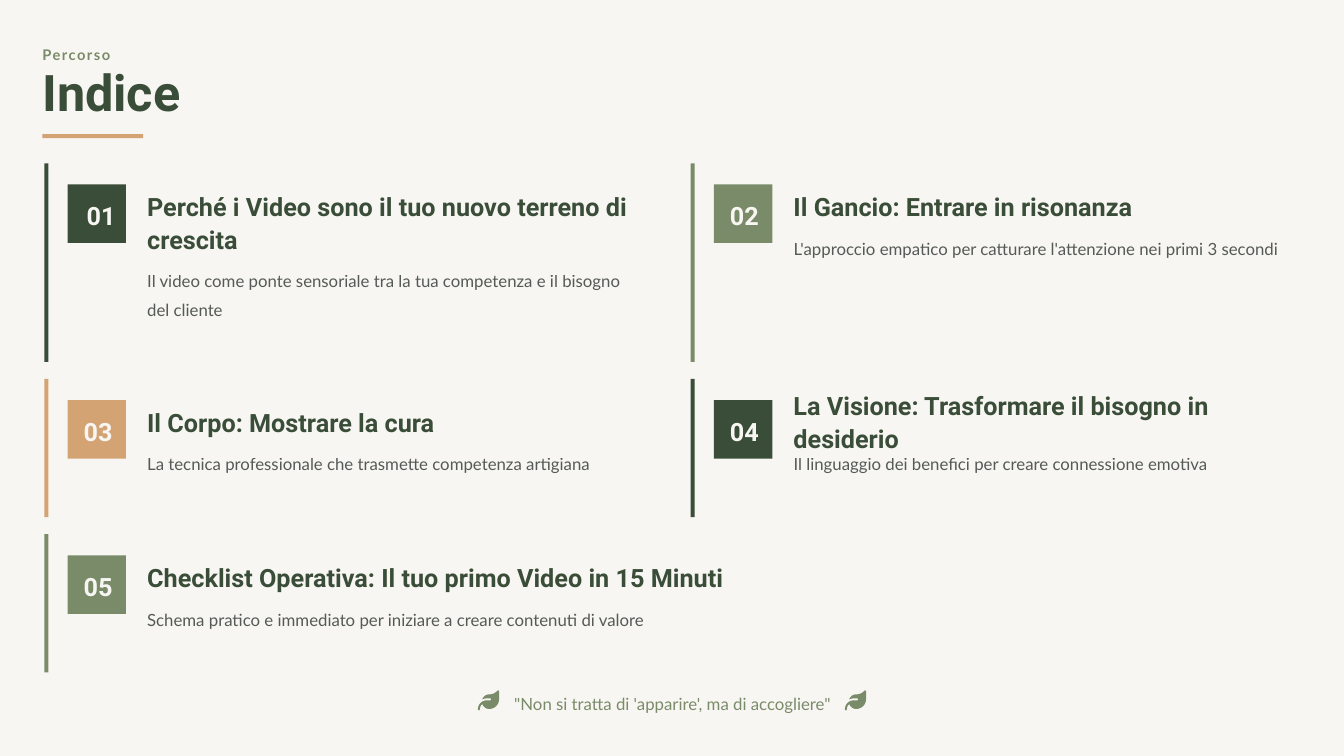
from dataclasses import dataclass
from pptx import Presentation
from pptx.dml.color import RGBColor
from pptx.enum.shapes import MSO_SHAPE
from pptx.enum.text import MSO_ANCHOR, MSO_AUTO_SIZE, PP_ALIGN
from pptx.oxml.ns import qn
from pptx.util import Inches, Pt
from lxml.etree import SubElement

FOREST, SAGE, SAND, CREAM, INK = "3A4D39", "7A8B69", "D4A373", "F8F6F2", "2C332E"
COLUMN_LEFTS = (0.44, 6.85)
ROW_HEIGHTS = (1.97, 1.37, 1.37)
FIRST_ROW_TOP, ROW_GAP = 1.62, 0.17
HALF_WIDTH, FULL_WIDTH = 6.04, 12.46

LEAF_START = (471, 7)
LEAF_CURVES = [
    ((478, 1), (487, -2), (496, 1)), ((505, 5), (512, 14), (512, 24)),
    ((512, 24), (512, 211), (512, 211)), ((512, 342), (404, 448), (273, 448)),
    ((196, 448), (130, 399), (106, 329)), ((70, 360), (48, 405), (48, 456)),
    ((48, 469), (37, 480), (24, 480)), ((11, 480), (0, 469), (0, 456)),
    ((0, 381), (38, 315), (96, 276)), ((131, 253), (174, 240), (216, 240)),
    ((216, 240), (296, 240), (296, 240)), ((309, 240), (320, 229), (320, 216)),
    ((320, 203), (309, 192), (296, 192)), ((296, 192), (216, 192), (216, 192)),
    ((176, 192), (139, 201), (105, 217)), ((128, 146), (194, 96), (272, 96)),
    ((338, 96), (388, 74), (421, 52)), ((440, 39), (456, 24), (471, 7)),
]


@dataclass
class Chapter:
    """One entry of the index."""
    row: int
    column: int
    color: str
    heading: str
    summary: str
    number_inset: float = 0.16
    lines: int = 1
    width: float = HALF_WIDTH


CHAPTERS = [
    Chapter(0, 0, FOREST, "Perché i Video sono il tuo nuovo terreno di crescita",
            "Il video come ponte sensoriale tra la tua competenza e il bisogno del cliente",
            number_inset=0.19, lines=2),
    Chapter(0, 1, SAGE, "Il Gancio: Entrare in risonanza",
            "L'approccio empatico per catturare l'attenzione nei primi 3 secondi"),
    Chapter(1, 0, SAND, "Il Corpo: Mostrare la cura",
            "La tecnica professionale che trasmette competenza artigiana"),
    Chapter(1, 1, FOREST, "La Visione: Trasformare il bisogno in desiderio",
            "Il linguaggio dei benefici per creare connessione emotiva"),
    Chapter(2, 0, SAGE, "Checklist Operativa: Il tuo primo Video in 15 Minuti",
            "Schema pratico e immediato per iniziare a creare contenuti di valore",
            width=FULL_WIDTH),
]


def rgb(value):
    """Turn a hex string into a colour."""
    return RGBColor.from_string(value)


def paint(shape, color):
    """Give a shape a flat fill without line or shadow."""
    shape.shadow.inherit = False
    shape.fill.solid()
    shape.fill.fore_color.rgb = rgb(color)
    shape.line.fill.background()


def add_block(page, left, top, width, height, color):
    """Add a plain rectangle."""
    block = page.shapes.add_shape(
        MSO_SHAPE.RECTANGLE, Inches(left), Inches(top), Inches(width), Inches(height))
    paint(block, color)
    return block


def write(shape, text, font, size, color, bold=False, spacing=1.1, inset=0):
    """Write one left-aligned paragraph, centred vertically, and return it."""
    frame = shape.text_frame
    frame.word_wrap = True
    frame.auto_size = MSO_AUTO_SIZE.NONE
    frame.vertical_anchor = MSO_ANCHOR.MIDDLE
    frame.margin_left = Inches(inset)
    frame.margin_top = frame.margin_right = frame.margin_bottom = 0
    frame.text = text
    para = frame.paragraphs[0]
    para.alignment = PP_ALIGN.LEFT
    para.line_spacing = spacing
    para.font.name, para.font.size, para.font.bold = font, Pt(size), bold
    para.font.color.rgb = rgb(color)
    return para


def add_text(page, left, top, width, height, *content, **style):
    """Add a text box holding one paragraph."""
    box = page.shapes.add_textbox(
        Inches(left), Inches(top), Inches(width), Inches(height))
    return write(box, *content, **style)


def add_header(page, left, top):
    """Place the overline, the title and its underline."""
    overline = add_text(page, left, top, 12.57, 0.21, "Percorso", "Lato", 10.5, SAGE,
                        bold=True, spacing=1.2)
    overline._p.pPr.find(qn("a:defRPr")).set("spc", "110")
    title = page.shapes.title
    title.left, title.top = Inches(left), Inches(top + 0.29)
    title.width, title.height = Inches(12.75), Inches(0.5)
    write(title, "Indice", "Roboto", 36, FOREST, bold=True, spacing=0.8)
    add_block(page, left, top + 0.91, 1, 0.04, SAND)


def add_chapter(page, number, chapter, left, top, height):
    """Place the bar, number tile, heading and summary of a chapter."""
    add_block(page, left, top, 0.04, height, chapter.color)
    tile = add_block(page, left + 0.23, top + 0.21, 0.58, 0.58, chapter.color)
    write(tile, f"{number:02}", "Roboto", 18, CREAM, bold=True, inset=chapter.number_inset)
    text_left, heading_top = left + 1.02, top + 0.25
    heading_width, heading_height = chapter.width - 1.08, 0.33 * chapter.lines
    add_text(page, text_left, heading_top, heading_width, heading_height,
             chapter.heading, "Roboto", 18, FOREST, bold=True)
    summary = add_text(page, text_left, heading_top + heading_height + 0.09,
                       heading_width - 0.04, 0.27 * chapter.lines,
                       chapter.summary, "Lato", 12, INK, spacing=1.4)
    ink = next(summary._p.pPr.iter(qn("a:srgbClr")))
    SubElement(ink, qn("a:alpha")).set("val", "80000")


def add_leaf(page, left, top, size):
    """Draw a leaf from its Bézier curves."""
    points, start = [], LEAF_START
    for first, second, end in LEAF_CURVES:
        for step in range(1, 9):
            t = step / 8
            points.append(tuple(
                (1 - t) ** 3 * a + 3 * (1 - t) ** 2 * t * b + 3 * (1 - t) * t ** 2 * c + t ** 3 * d
                for a, b, c, d in zip(start, first, second, end)))
        start = end
    builder = page.shapes.build_freeform(*LEAF_START, scale=Inches(size) / 512)
    builder.add_line_segments(points, close=True)
    paint(builder.convert_to_shape(Inches(left), Inches(top)), SAGE)


def add_quote(page, left, top):
    """Place the closing quote between two leaves."""
    add_leaf(page, left, top + 0.02, 0.21)
    add_text(page, left + 0.36, top, 3.21, 0.25,
             "\"Non si tratta di 'apparire', ma di accogliere\"", "Lato", 12, SAGE, spacing=1.3)
    add_leaf(page, left + 3.64, top + 0.02, 0.21)


def main():
    """Build the index slide and save the deck."""
    deck = Presentation()
    deck.slide_width, deck.slide_height = Inches(13.33), Inches(7.5)
    page = deck.slides.add_slide(deck.slide_layouts[5])
    page.background.fill.solid()
    page.background.fill.fore_color.rgb = rgb(CREAM)
    add_header(page, 0.42, 0.42)
    for number, chapter in enumerate(CHAPTERS, start=1):
        top = FIRST_ROW_TOP + sum(ROW_HEIGHTS[:chapter.row]) + ROW_GAP * chapter.row
        add_chapter(page, number, chapter, COLUMN_LEFTS[chapter.column], top,
                    ROW_HEIGHTS[chapter.row])
    add_quote(page, 4.74, 6.83)
    deck.save("out.pptx")


if __name__ == "__main__":
    main()
